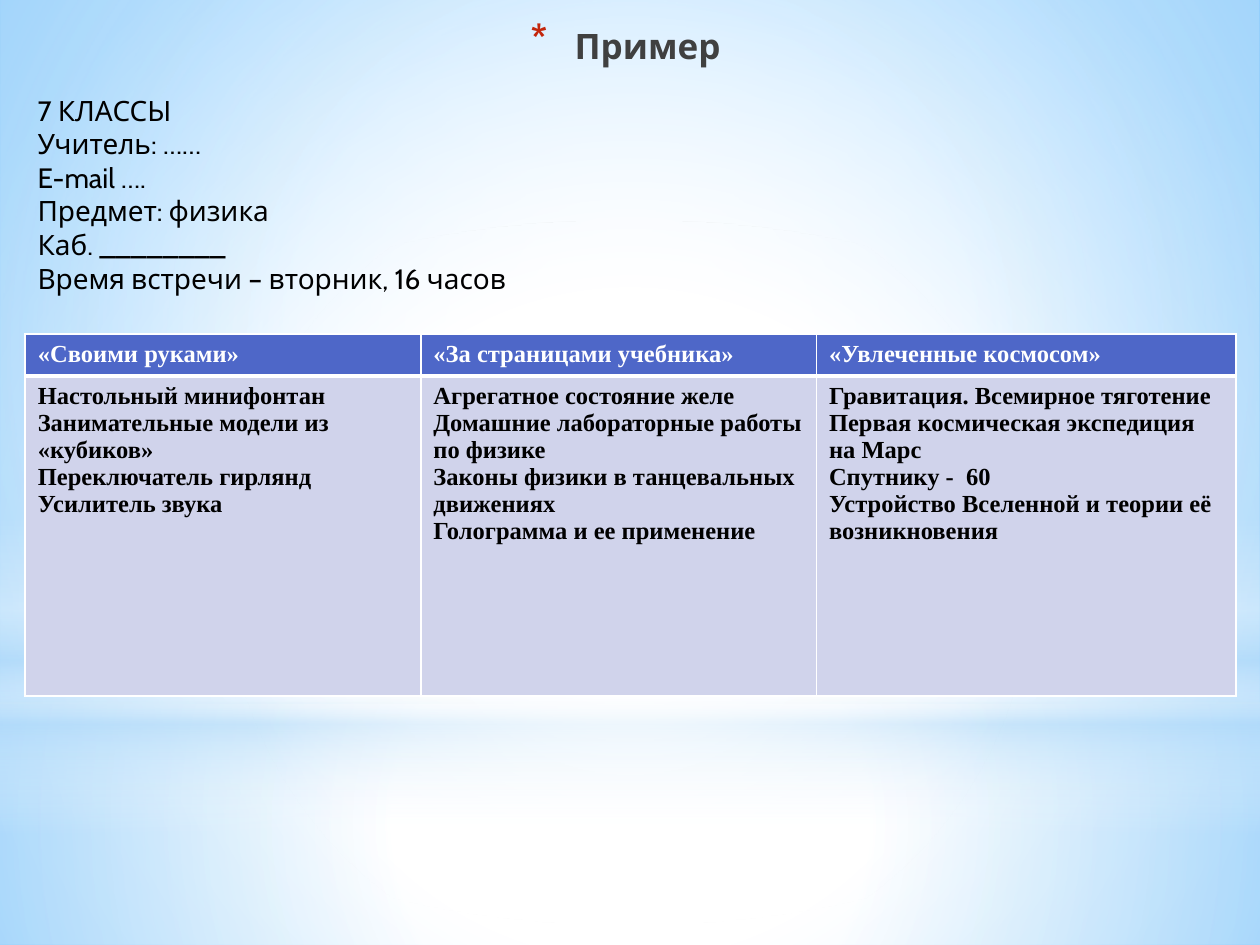
import pptx
import pptx.util
import pptx.dml.color
import pptx.enum.shapes
import pptx.enum.text
import pptx.oxml
import pptx.oxml.ns

W, H = 10, 7.5
CENTRE = (50, 50, 50, 50)
BODY_FONT, TABLE_FONT = "Cabin", "Times New Roman"

INFO = ["7 КЛАССЫ", "Учитель: ……", "E-mail ….", "Предмет: физика",
        "Каб. ________", "Время встречи – вторник, 16 часов"]
TOPICS = {
    "«Своими руками»": [
        "Настольный минифонтан", "Занимательные модели из «кубиков»",
        "Переключатель гирлянд", "Усилитель звука"],
    "«За страницами учебника»": [
        "Агрегатное состояние желе", "Домашние лабораторные работы по физике",
        "Законы физики в танцевальных движениях", "Голограмма и ее применение"],
    "«Увлеченные космосом»": [
        "Гравитация. Всемирное тяготение", "Первая космическая экспедиция на Марс",
        "Спутнику -  60", "Устройство Вселенной и теории её возникновения"],
}


def rgb(value):
    return pptx.dml.color.RGBColor.from_string(value)


def inches(box):
    return [pptx.util.Inches(v) for v in box]


def xml(text):
    """Parse a fragment whose root tag carries the drawing namespace."""
    return pptx.oxml.parse_xml(text.replace(" ", f' {pptx.oxml.ns.nsdecls("a")} ', 1))


def set_gradient(fill, parent, stops, to=None):
    """Gradient of (position, colour, opacity) stops: circular, or vertical without to."""
    fill.solid()
    gs = "".join(f'<a:gs pos="{pos * 1000}"><a:srgbClr val="{color}">'
                 f'<a:alpha val="{alpha * 1000}"/></a:srgbClr></a:gs>'
                 for pos, color, alpha in stops)
    if to:
        sides = " ".join(f'{side}="{v * 1000}"' for side, v in zip("ltrb", to))
        shade = f'<a:path path="circle"><a:fillToRect {sides}/></a:path>'
    else:
        shade = '<a:lin ang="5400000" scaled="0"/>'
    solid = parent.find(pptx.oxml.ns.qn("a:solidFill"))
    parent.replace(solid, xml(f'<a:gradFill rotWithShape="1"><a:gsLst>{gs}</a:gsLst>{shade}</a:gradFill>'))


def write(tf, lines, font, size, color, bold=False):
    tf.word_wrap = True
    tf.text = "\n".join(lines)
    for p in tf.paragraphs:
        for r in p.runs:
            r.font.name, r.font.size, r.font.bold = font, pptx.util.Pt(size), bold
            r.font.color.rgb = rgb(color)


def add_background(slide):
    """Sky gradient with the soft bands and the glow over it."""
    fill = slide.background.fill
    fill.solid()
    bg = slide._element.cSld.find(".//" + pptx.oxml.ns.qn("p:bgPr"))
    set_gradient(fill, bg, [(0, "FFFFFF", 100), (42, "FFFFFF", 100), (100, "63BCFF", 100)],
                 (24, 44, 24, 12))
    kinds = pptx.enum.shapes.MSO_SHAPE
    horizon = 5.58
    layers = [
        (kinds.RECTANGLE, horizon, H - horizon, CENTRE,
         [(0, "FFFFFF", 91), (37, "FFFFFF", 76), (100, "B4DCFA", 79)]),
        (kinds.RECTANGLE, 0, horizon, CENTRE,
         [(0, "FFFFFF", 89), (48, "FFFFFF", 62), (100, "B4DCFA", 79)]),
        (kinds.RECTANGLE, 4.12, 2.5, None,
         [(0, "FFFFFF", 0), (29, "FFFFFF", 30), (45, "B4DCFA", 40),
          (55, "FFFFFF", 26), (65, "B4DCFA", 60), (100, "FFFFFF", 0)]),
        (kinds.OVAL, 1.75, horizon, CENTRE, [(0, "FFFFFF", 100), (56, "FFFFFF", 0)]),
    ]
    for kind, top, height, to, stops in layers:
        sp = slide.shapes.add_shape(kind, *inches((0, top, W, height)))
        sp.shadow.inherit = False
        sp.line.fill.background()
        set_gradient(sp.fill, sp._element.spPr, stops, to)


def add_title(slide, box, text):
    tf = slide.shapes.add_textbox(*inches(box)).text_frame
    write(tf, [text], BODY_FONT, 20, "404040", bold=True)
    tf.vertical_anchor = pptx.enum.text.MSO_ANCHOR.MIDDLE
    p = tf.paragraphs[0]
    p.alignment = pptx.enum.text.PP_ALIGN.CENTER
    # Red asterisk bullet with a hanging indent
    pPr = p._p.get_or_add_pPr()
    indent = pptx.util.Inches(0.35)
    pPr.set("marL", str(indent))
    pPr.set("indent", str(-indent))
    for bullet in ('<a:buClr ><a:srgbClr val="C3260C"/></a:buClr>',
                   '<a:buSzPct val="128000"/>', '<a:buChar char="*"/>'):
        pPr.append(xml(bullet))


def add_info(slide, box, lines):
    tf = slide.shapes.add_textbox(*inches(box)).text_frame
    write(tf, lines, BODY_FONT, 16, "000000")


def set_borders(cell, top, bottom):
    tcPr = cell._tc.get_or_add_tcPr()
    widths = {"lnL": 1, "lnR": 1, "lnT": top, "lnB": bottom}
    for i, (tag, width) in enumerate(widths.items()):
        tcPr.insert(i, xml(f'<a:{tag} w="{pptx.util.Pt(width)}"><a:solidFill>'
                           f'<a:srgbClr val="FFFFFF"/></a:solidFill></a:{tag}>'))


def add_topics(slide, box, topics, col_widths, row_heights):
    frame = slide.shapes.add_table(2, len(topics), *inches(box))
    table = frame.table
    for column, width in zip(table.columns, col_widths):
        column.width = pptx.util.Inches(width)
    for row, height in zip(table.rows, row_heights):
        row.height = pptx.util.Inches(height)
    for c, (heading, lines) in enumerate(topics.items()):
        rows = [([heading], "FFFFFF", "4E67C8", 1, 3), (lines, "000000", "D0D3EB", 3, 1)]
        for r, (texts, color, fill, top, bottom) in enumerate(rows):
            cell = table.cell(r, c)
            write(cell.text_frame, texts, TABLE_FONT, 14, color, bold=True)
            cell.fill.solid()
            cell.fill.fore_color.rgb = rgb(fill)
            set_borders(cell, top, bottom)


def main():
    prs = pptx.Presentation()
    prs.slide_width, prs.slide_height = inches((W, H))
    slide = prs.slides.add_slide(prs.slide_layouts[6])
    left = 0.02 * W
    add_background(slide)
    add_title(slide, (left, 0.13, 9.53, 0.47), "Пример")
    add_info(slide, (left, 0.69, 9.41, 1.99), INFO)
    add_topics(slide, (left, 2.65, 9.61, 2.86), TOPICS, (3.14, 3.14, 3.33), (0.32, 2.54))
    prs.save("out.pptx")


if __name__ == "__main__":
    main()
